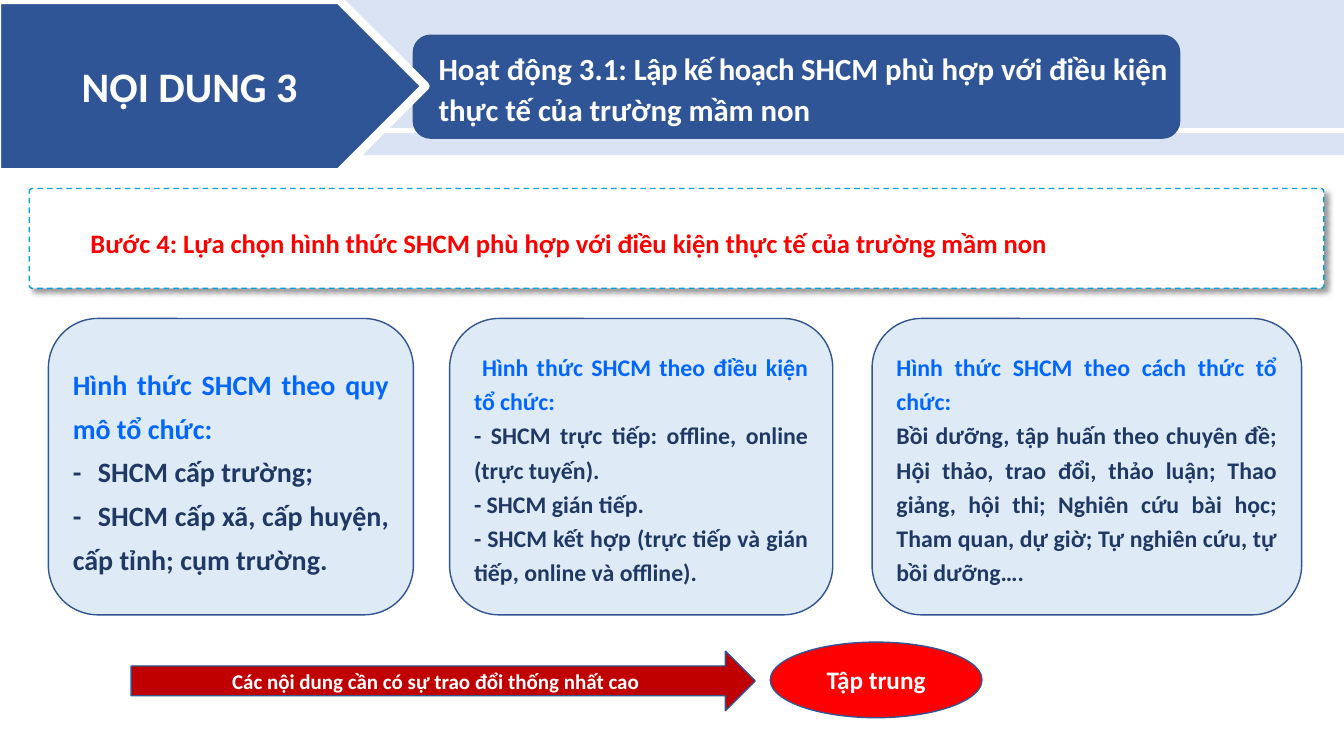
from dataclasses import dataclass

import lxml.etree
import pptx
import pptx.dml.color
import pptx.enum.dml
import pptx.enum.shapes
import pptx.enum.text
import pptx.oxml.ns
import pptx.util

PX = 9144  # one px is a hundredth of an inch
FONT = "Calibri"
COLORS = {
    "white": "FFFFFF", "band": "DAE3F3", "blue": "2F5597", "outline": "325491",
    "cyan": "00A1DA", "card": "DEEBF7", "heading": "0066FF", "navy": "203864",
    "red": "FF0000", "dark_red": "C00000", "black": "000000",
}
KIND = pptx.enum.shapes.MSO_SHAPE
ALIGN = pptx.enum.text.PP_ALIGN
ANCHOR = pptx.enum.text.MSO_ANCHOR


@dataclass
class Block:
    kind: KIND
    box: tuple[int, int, int, int]
    fill: str
    line: str | None = None
    weight: float = 1
    text: str = ""
    size: int = 18


@dataclass
class Card:
    left: int
    width: int
    size: int
    spacing: float
    tab: int
    heading: str
    lines: list[str]
    indent: int = 0


def color(name: str) -> pptx.dml.color.RGBColor:
    return pptx.dml.color.RGBColor.from_string(COLORS[name])


def draw_block(page, block: Block):
    shape = page.shapes.add_shape(block.kind, *(n * PX for n in block.box))
    shape.shadow.inherit = False
    shape.fill.solid()
    shape.fill.fore_color.rgb = color(block.fill)
    if block.line:
        shape.line.color.rgb = color(block.line)
        shape.line.width = pptx.util.Pt(block.weight)
    else:
        shape.line.fill.background()
    if block.text:
        write(shape.text_frame, block.text, size=block.size)
    return shape


def write(frame, text: str, *, size: int, ink: str = "white", align=ALIGN.CENTER,
          spacing: float = 1, indent: int = 0, tab: int = 0, anchor=ANCHOR.MIDDLE,
          tight: str = "") -> None:
    """Add one bold paragraph; the words in tight are set slightly closer."""
    frame.word_wrap = True
    frame.vertical_anchor = anchor
    para = frame.paragraphs[0]
    if para.runs:
        para = frame.add_paragraph()
    para.alignment = align
    para.line_spacing = spacing
    props = para._p.get_or_add_pPr()
    if indent:
        props.set("marL", "0")
        props.set("indent", str(indent * PX))
    if tab:
        tabs = lxml.etree.SubElement(props, pptx.oxml.ns.qn("a:tabLst"))
        lxml.etree.SubElement(tabs, pptx.oxml.ns.qn("a:tab"), pos=str(tab * PX), algn="l")
    before, middle, after = text.partition(tight) if tight else (text, "", "")
    for part in filter(None, (before, middle, after)):
        span = para.add_run()
        span.text = part
        span.font.name = FONT
        span.font.size = pptx.util.Pt(size)
        span.font.bold = True
        span.font.color.rgb = color(ink)
        if part == tight:
            span._r.get_or_add_rPr().set("spc", "-30")


def add_shadow(shape) -> None:
    effects = shape._element.spPr.find(pptx.oxml.ns.qn("a:effectLst"))
    shadow = lxml.etree.SubElement(
        effects, pptx.oxml.ns.qn("a:outerShdw"), blurRad=str(pptx.util.Pt(4)),
        dist=str(pptx.util.Pt(3)), dir=str(45 * 60000), algn="tl", rotWithShape="0")
    shade = lxml.etree.SubElement(shadow, pptx.oxml.ns.qn("a:srgbClr"), val=COLORS["black"])
    lxml.etree.SubElement(shade, pptx.oxml.ns.qn("a:alpha"), val="40000")


def draw_title(page) -> None:
    title = page.shapes.title
    title.left, title.top, title.width, title.height = (n * PX for n in (425, 41, 745, 90))
    title.text_frame.auto_size = pptx.enum.text.MSO_AUTO_SIZE.NONE
    write(title.text_frame,
          "Hoạt động 3.1: Lập kế hoạch SHCM phù hợp với điều kiện thực tế của trường mầm non",
          size=22, align=ALIGN.LEFT, spacing=1.1, anchor=ANCHOR.TOP, tight="Lập kế hoạch ")
    # Bring the title in front of the header shapes
    title.element.getparent().append(title.element)


def draw_step(page) -> None:
    step = draw_block(page, Block(KIND.ROUNDED_RECTANGLE, (29, 187, 1284, 99), "white", "cyan"))
    step.adjustments[0] = 0.03
    step.line.dash_style = pptx.enum.dml.MSO_LINE.DASH
    add_shadow(step)
    write(step.text_frame,
          "Bước 4: Lựa chọn hình thức SHCM phù hợp với điều kiện thực tế của trường mầm non",
          size=19, ink="red", align=ALIGN.LEFT, spacing=1.3, indent=50)


def draw_card(page, card: Card) -> None:
    shape = draw_block(page, Block(KIND.ROUNDED_RECTANGLE, (card.left, 316, card.width, 294),
                                   "card", "outline"))
    layout = dict(size=card.size, align=ALIGN.JUSTIFY, spacing=card.spacing, tab=card.tab)
    write(shape.text_frame, card.heading, ink="heading", indent=card.indent, **layout)
    for line in card.lines:
        write(shape.text_frame, line, ink="navy", **layout)


HEADER = [
    Block(KIND.RECTANGLE, (0, 0, 1333, 154), "band"),
    Block(KIND.RECTANGLE, (222, 127, 1111, 5), "white"),
    Block(KIND.ROUNDED_RECTANGLE, (410, 35, 760, 102), "blue", "outline"),
    Block(KIND.PENTAGON, (-3, 0, 425, 171), "blue", "white", 6, "NỘI DUNG 3", 30),
]
FOOTER = [
    Block(KIND.RIGHT_ARROW, (130, 646, 619, 59), "dark_red", "outline",
          text="Các nội dung cần có sự trao đổi thống nhất cao", size=15),
    Block(KIND.OVAL, (764, 637, 210, 75), "red", "outline", text="Tập trung"),
]
CARDS = [
    Card(48, 362, 20, 1.3, 25, "Hình thức SHCM theo quy mô tổ chức:",
         ["-\tSHCM cấp trường;", "-\tSHCM cấp xã, cấp huyện, cấp tỉnh; cụm trường."]),
    Card(446, 380, 17, 1.2, 50, "Hình thức SHCM theo điều kiện tổ chức:",
         ["- SHCM trực tiếp: offline, online (trực tuyến).", "- SHCM gián tiếp.",
          "- SHCM kết hợp (trực tiếp và gián tiếp, online và offline)."], indent=8),
    Card(865, 426, 17, 1.2, 50, "Hình thức SHCM theo cách thức tổ chức:",
         ["Bồi dưỡng, tập huấn theo chuyên đề; Hội thảo, trao đổi, thảo luận; Thao giảng, "
          "hội thi; Nghiên cứu bài học; Tham quan, dự giờ; Tự nghiên cứu, tự bồi dưỡng…."]),
]


def main() -> None:
    deck = pptx.Presentation()
    deck.slide_width, deck.slide_height = 1333 * PX, 750 * PX
    page = deck.slides.add_slide(deck.slide_layouts[5])

    # Header band and title
    for block in HEADER:
        draw_block(page, block)
    draw_title(page)

    # Step panel, closing message and the three cards
    draw_step(page)
    for block in FOOTER:
        draw_block(page, block)
    for card in CARDS:
        draw_card(page, card)

    deck.save("out.pptx")


if __name__ == "__main__":
    main()
